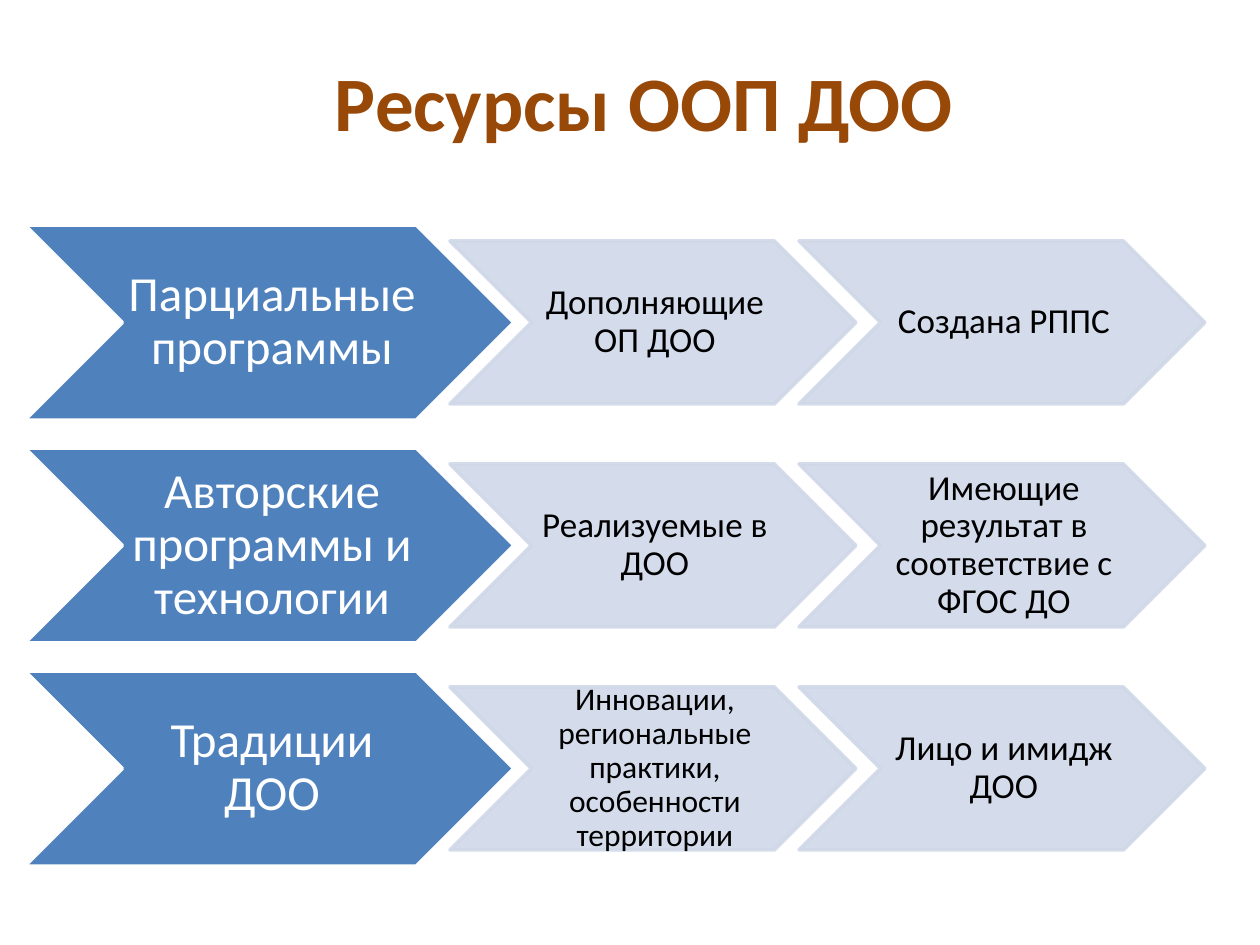
from dataclasses import dataclass

from lxml import etree
from pptx import Presentation
from pptx.dml.color import RGBColor
from pptx.enum.shapes import MSO_SHAPE
from pptx.enum.text import MSO_ANCHOR, PP_ALIGN
from pptx.oxml.ns import qn
from pptx.util import Pt

CHEVRON = MSO_SHAPE.CHEVRON
MIDDLE = MSO_ANCHOR.MIDDLE
CENTER = PP_ALIGN.CENTER
PX = 914400 / 126


@dataclass(frozen=True)
class Theme:
    font: str = "Calibri"
    heading: str = "984807"
    resource_fill: str = "4F81BD"
    resource_ink: str = "FFFFFF"
    detail_fill: str = "D0D8E8"
    detail_ink: str = "000000"
    detail_opacity: int = 90
    outline: int = 2
    heading_size: int = 44
    resource_size: int = 28
    detail_size: int = 20
    dense_size: int = 18


THEME = Theme()
RESOURCE = {
    "fill": THEME.resource_fill,
    "edge": THEME.resource_ink,
    "ink": THEME.resource_ink,
    "opacity": 100,
    "insets": (5, 3, 0, 3),
}
DETAIL = {
    "fill": THEME.detail_fill,
    "edge": THEME.detail_fill,
    "ink": THEME.detail_ink,
    "opacity": THEME.detail_opacity,
    "insets": (4, 1, 0, 1),
}
ROWS = [
    ("Парциальные программы",
     [("Дополняющие ОП ДОО", THEME.detail_size),
      ("Создана РППС", THEME.detail_size)]),
    ("Авторские программы и технологии",
     [("Реализуемые в ДОО", THEME.detail_size),
      ("Имеющие результат в соответствие с ФГОС ДО", THEME.detail_size)]),
    ("Традиции ДОО",
     [("Инновации, региональные практики, особенности территории", THEME.dense_size),
      ("Лицо и имидж ДОО", THEME.detail_size)]),
]


def emu(px):
    return round(px * PX)


def apply(target, values):
    for attribute, value in values.items():
        setattr(target, attribute, value)


def write(frame, wording, size, ink, bold=False):
    apply(frame, {"word_wrap": True, "vertical_anchor": MIDDLE})
    frame.text = wording
    paragraph = frame.paragraphs[0]
    paragraph.alignment = CENTER
    font = paragraph.runs[0].font
    apply(font, {"name": THEME.font, "size": Pt(size), "bold": bold})
    font.color.rgb = RGBColor.from_string(ink)
    return paragraph


def place_heading(slide, box, wording):
    heading = slide.shapes.title
    apply(heading, dict(zip(("left", "top", "width", "height"), map(emu, box))))
    write(heading.text_frame, wording, THEME.heading_size, THEME.heading, bold=True)


def place_chevron(shapes, box, wording, size, style):
    chevron = shapes.add_shape(CHEVRON, *map(emu, box))
    chevron.shadow.inherit = False
    chevron.fill.solid()
    chevron.fill.fore_color.rgb = RGBColor.from_string(style["fill"])
    chevron.line.color.rgb = RGBColor.from_string(style["edge"])
    chevron.line.width = Pt(THEME.outline)
    if style["opacity"] < 100:
        for tint in chevron.element.spPr.iter(qn("a:srgbClr")):
            etree.SubElement(tint, qn("a:alpha")).set("val", str(style["opacity"] * 1000))
    frame = chevron.text_frame
    sides = ("margin_left", "margin_top", "margin_right", "margin_bottom")
    apply(frame, dict(zip(sides, map(emu, style["insets"]))))
    write(frame, wording, size, style["ink"]).line_spacing = 0.9


def place_row(shapes, box, resource, details):
    left, top, _, height = box
    place_chevron(shapes, (left, top, 489, height), resource, THEME.resource_size, RESOURCE)
    for column, (detail, size) in enumerate(details):
        detail_box = (left + 425 + column * 349, top + 16, 406, height - 32)
        place_chevron(shapes, detail_box, detail, size, DETAIL)


def place_resources(slide, box):
    left, top, width, height = box
    row_height = 195
    pitch = (height - row_height) / (len(ROWS) - 1)
    shapes = slide.shapes.add_group_shape().shapes
    for index, (resource, details) in enumerate(ROWS):
        row_box = (left, top + index * pitch, width, row_height)
        place_row(shapes, row_box, resource, details)


def main():
    deck = Presentation()
    apply(deck, {"slide_width": emu(1260), "slide_height": emu(945)})
    slide = deck.slides.add_slide(deck.slide_layouts[5])
    place_heading(slide, (123, 26, 1042, 149), "Ресурсы ООП ДОО")
    place_resources(slide, (25, 225, 1180, 641))
    deck.save("out.pptx")


if __name__ == "__main__":
    main()
